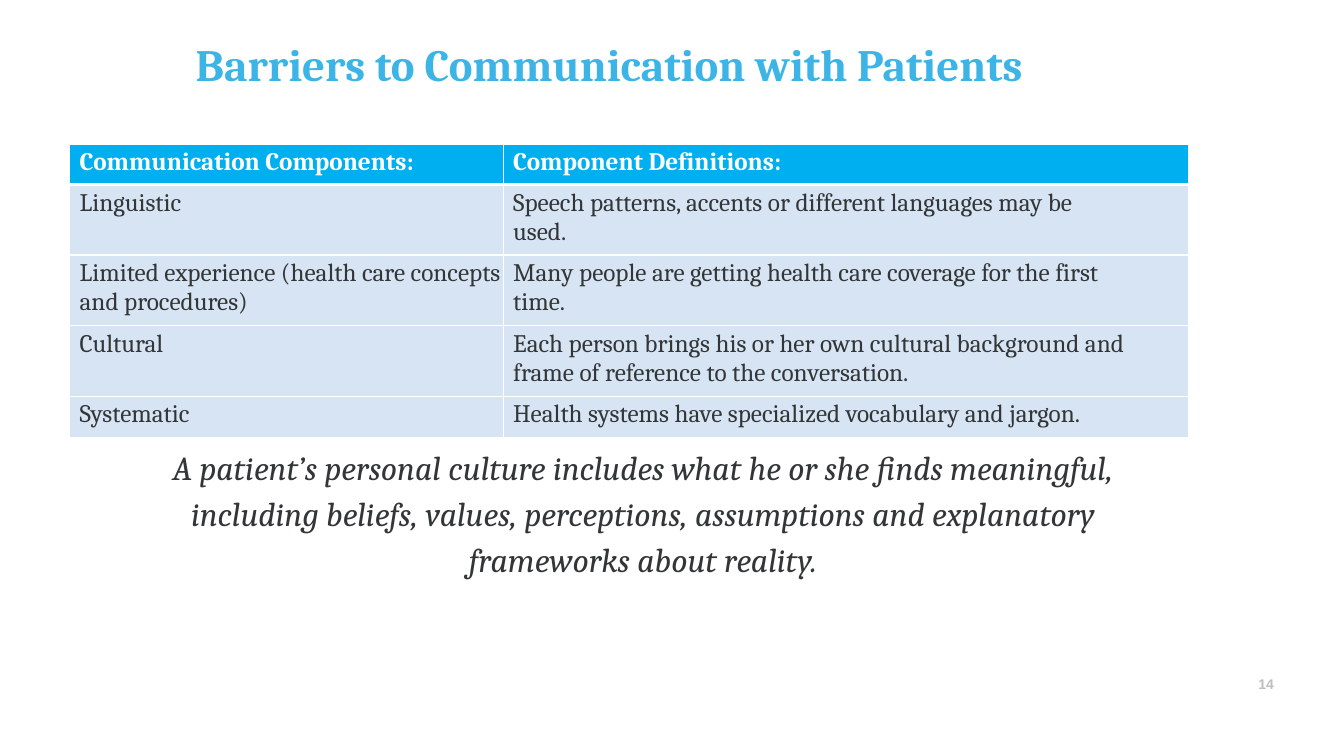
from dataclasses import dataclass

import pptx
import pptx.dml.color
import pptx.enum.text
import pptx.oxml
import pptx.oxml.ns
import pptx.util

Inches = pptx.util.Inches
Pt = pptx.util.Pt
PP_ALIGN = pptx.enum.text.PP_ALIGN
MSO_ANCHOR = pptx.enum.text.MSO_ANCHOR


@dataclass(frozen=True)
class Theme:
    """Colours, fonts and type sizes of the slide."""
    heading: str = "3CB5E6"
    ink: str = "333637"
    white: str = "FFFFFF"
    header_fill: str = "00AFEF"
    row_fill: str = "D7E4F4"
    number: str = "BEBEBE"
    serif: str = "Cambria"
    sans: str = "Arial"
    title_size: int = 32
    quote_size: int = 24
    table_size: int = 18
    number_size: int = 10


THEME = Theme()
HEADINGS = ("Communication Components:", "Component Definitions:")
BARRIERS = (
    ("Linguistic",
     "Speech patterns, accents or different languages may be used."),
    ("Limited experience (health care concepts and procedures)",
     "Many people are getting health care coverage for the first time."),
    ("Cultural",
     "Each person brings his or her own cultural background and "
     "frame of reference to the conversation."),
    ("Systematic",
     "Health systems have specialized vocabulary and jargon."),
)
COLUMN_WIDTHS = (4.3, 6.8)
ROW_HEIGHTS = (0.4, 0.7, 0.7, 0.7, 0.41)
RIGHT_MARGINS = (0, 0.6)
QUOTE = ("A patient’s personal culture includes what he or she finds meaningful, "
         "including beliefs, values, perceptions, assumptions and explanatory "
         "frameworks about reality.")


def rgb(value):
    """Return a colour object for a hex value."""
    return pptx.dml.color.RGBColor.from_string(value)


def write(frame, text, size, color, font=THEME.serif, bold=False, italic=False,
          align=PP_ALIGN.LEFT):
    """Set one paragraph of text and format its run."""
    frame.text = text
    paragraph = frame.paragraphs[0]
    paragraph.alignment = align
    style = paragraph.runs[0].font
    style.name, style.size = font, Pt(size)
    style.bold, style.italic = bold, italic
    style.color.rgb = rgb(color)
    return paragraph


def set_margins(frame, left=0, top=0, right=0, bottom=0):
    """Set the inner margins of a text frame or a cell, in inches."""
    frame.margin_left, frame.margin_top = Inches(left), Inches(top)
    frame.margin_right, frame.margin_bottom = Inches(right), Inches(bottom)


def set_borders(cell, top, bottom):
    """Draw white borders round a cell, with top and bottom widths in points."""
    properties = cell._tc.get_or_add_tcPr()
    for side, width in (("L", 1), ("R", 1), ("T", top), ("B", bottom)):
        properties.append(pptx.oxml.parse_xml(
            f'<a:ln{side} {pptx.oxml.ns.nsdecls("a")} w="{Pt(width)}">'
            f'<a:solidFill><a:srgbClr val="{THEME.white}"/></a:solidFill>'
            f'</a:ln{side}>'))


def add_title(slide, left, top, width, height):
    """Place the slide title in its placeholder."""
    title = slide.shapes.title
    title.left, title.top = Inches(left), Inches(top)
    title.width, title.height = Inches(width), Inches(height)
    frame = title.text_frame
    frame.word_wrap = True
    frame.auto_size = pptx.enum.text.MSO_AUTO_SIZE.NONE
    frame.vertical_anchor = MSO_ANCHOR.TOP
    set_margins(frame, left=0.37, top=0.14)
    write(frame, "Barriers to Communication with Patients",
          THEME.title_size, THEME.heading, bold=True)


def add_barriers(slide, left, top, width, height):
    """Place the table of communication components and definitions."""
    rows = (HEADINGS,) + BARRIERS
    table = slide.shapes.add_table(
        len(rows), len(HEADINGS), Inches(left), Inches(top),
        Inches(width), Inches(height)).table
    for column, column_width in zip(table.columns, COLUMN_WIDTHS):
        column.width = Inches(column_width)
    for row, row_height in zip(table.rows, ROW_HEIGHTS):
        row.height = Inches(row_height)
    for r, texts in enumerate(rows):
        header = r == 0
        for c, text in enumerate(texts):
            cell = table.cell(r, c)
            set_margins(cell, left=0.1, top=0.04, right=RIGHT_MARGINS[c])
            set_borders(cell, top=3 if r == 1 else 1, bottom=3 if header else 1)
            cell.fill.solid()
            cell.fill.fore_color.rgb = rgb(
                THEME.header_fill if header else THEME.row_fill)
            write(cell.text_frame, text, THEME.table_size,
                  THEME.white if header else THEME.ink, bold=header)


def add_quote(slide, left, top, width, height):
    """Place the centred statement about personal culture."""
    frame = slide.shapes.add_textbox(
        Inches(left), Inches(top), Inches(width), Inches(height)).text_frame
    frame.word_wrap = True
    set_margins(frame, top=0.01)
    statement = write(frame, QUOTE, THEME.quote_size, THEME.ink,
                      italic=True, align=PP_ALIGN.CENTER)
    statement.line_spacing = 1.14


def add_page_number(slide, left, top, width, height):
    """Place the page number."""
    frame = slide.shapes.add_textbox(
        Inches(left), Inches(top), Inches(width), Inches(height)).text_frame
    frame.word_wrap = True
    set_margins(frame, left=0.04)
    write(frame, "14", THEME.number_size, THEME.number, THEME.sans, bold=True)


def main():
    """Build the slide and save it."""
    deck = pptx.Presentation()
    deck.slide_width, deck.slide_height = Inches(13.33), Inches(7.5)
    slide = deck.slides.add_slide(deck.slide_layouts.get_by_name("Title Only"))
    add_title(slide, 1.57, 0.22, 10.19, 1.1)
    add_page_number(slide, 12.44, 6.7, 0.25, 0.18)
    add_barriers(slide, 0.69, 1.43, sum(COLUMN_WIDTHS), sum(ROW_HEIGHTS))
    add_quote(slide, 1.17, 4.37, 10.41, 1.4)
    deck.save("out.pptx")


if __name__ == "__main__":
    main()
